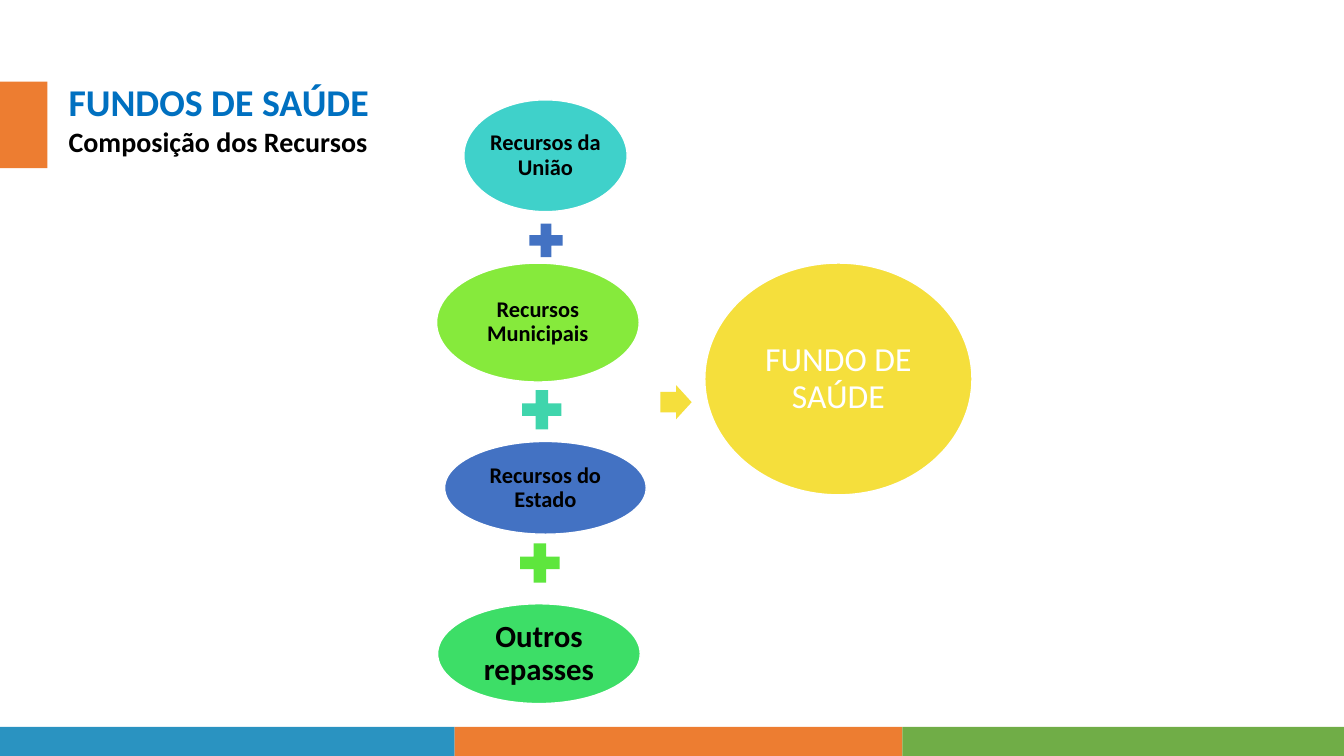
from pptx import Presentation
from pptx.dml.color import RGBColor
from pptx.enum.shapes import MSO_SHAPE
from pptx.enum.text import MSO_ANCHOR, MSO_AUTO_SIZE, PP_ALIGN
from pptx.util import Inches, Pt

FONT = "Calibri"
COLORS = {
    "title": "0070C0", "black": "000000", "white": "FFFFFF",
    "blue": "2A93C1", "orange": "ED7D31", "green": "70AD47",
    "turquoise": "3FD1CA", "lime": "86EA3C", "indigo": "4372C3",
    "emerald": "3DDE67", "aqua": "3FD5AC", "grass": "5EE63D",
    "yellow": "F5DF3C",
}

# text, size, colour, space it takes in the title
HEADING = [("FUNDOS DE SAÚDE", 27, "title"), ("Composição dos Recursos", 20, "black")]

# colour, width; laid from left to right
FOOTER_BANDS = [("blue", 4.51), ("orange", 4.44), ("green", 4.38)]
FOOTER_TOP, FOOTER_HEIGHT = 7.21, 0.29

# text, (left, top, width, height), fill, text size, text colour, bold
FUNDS = [
    ("Recursos da União", (4.6, 0.99, 1.62, 1.11), "turquoise", 16, "black", True),
    ("Recursos Municipais", (4.33, 2.61, 2.01, 1.18), "lime", 16, "black", True),
    ("Recursos do Estado", (4.41, 4.38, 2, 0.92), "indigo", 16, "black", True),
    ("Outros repasses", (4.34, 5.99, 2.01, 0.99), "emerald", 22, "black", True),
    ("FUNDO DE SAÚDE", (6.99, 2.61, 2.65, 2.3), "yellow", 24, "white", False),
]

# left, top, side, colour
PLUS_SIGNS = [
    (5.19, 2.16, 0.45, "indigo"),
    (5.11, 3.8, 0.53, "aqua"),
    (5.09, 5.32, 0.53, "grass"),
]


def rgb(name):
    return RGBColor.from_string(COLORS[name])


def add_filled(slide, kind, box, color):
    shape = slide.shapes.add_shape(kind, *map(Inches, box))
    shape.shadow.inherit = False
    shape.fill.solid()
    shape.fill.fore_color.rgb = rgb(color)
    shape.line.fill.background()
    return shape


def set_insets(frame, horizontal, vertical):
    frame.margin_left = frame.margin_right = Inches(horizontal)
    frame.margin_top = frame.margin_bottom = Inches(vertical)


def style(paragraph, size, color, bold, align, spacing):
    font = paragraph.font
    font.name, font.size, font.bold = FONT, Pt(size), bold
    font.color.rgb = rgb(color)
    paragraph.alignment = align
    paragraph.line_spacing = spacing


def add_heading(slide):
    title = slide.shapes.title
    title.left, title.top, title.width, title.height = map(Inches, (0.63, 0.76, 6.08, 0.84))
    frame = title.text_frame
    frame.text = "\n".join(line for line, _, _ in HEADING)
    frame.word_wrap = True
    frame.auto_size = MSO_AUTO_SIZE.NONE
    frame.vertical_anchor = MSO_ANCHOR.TOP
    set_insets(frame, 0.05, 0.02)
    for paragraph, (_, size, color) in zip(frame.paragraphs, HEADING):
        style(paragraph, size, color, True, PP_ALIGN.LEFT, 1.0)
        paragraph.space_before = Pt(0)


def add_fund(slide, label, box, fill, size, color, bold):
    oval = add_filled(slide, MSO_SHAPE.OVAL, box, fill)
    oval.line.color.rgb = rgb("white")
    oval.line.width = Pt(1)
    frame = oval.text_frame
    frame.text = label
    frame.word_wrap = True
    frame.vertical_anchor = MSO_ANCHOR.MIDDLE
    set_insets(frame, 0.02, 0.02)
    style(frame.paragraphs[0], size, color, bold, PP_ALIGN.CENTER, 0.9)


def main():
    prs = Presentation()
    prs.slide_width, prs.slide_height = Inches(13.33), Inches(7.5)
    slide = prs.slides.add_slide(prs.slide_layouts[5])

    left = 0
    for color, width in FOOTER_BANDS:
        add_filled(slide, MSO_SHAPE.RECTANGLE, (left, FOOTER_TOP, width, FOOTER_HEIGHT), color)
        left += width
    add_filled(slide, MSO_SHAPE.RECTANGLE, (0, 0.81, 0.47, 0.86), "orange")
    add_heading(slide)

    for fund in FUNDS:
        add_fund(slide, *fund)
    for left, top, side, color in PLUS_SIGNS:
        add_filled(slide, MSO_SHAPE.MATH_PLUS, (left, top, side, side), color)
    arrow = add_filled(slide, MSO_SHAPE.RIGHT_ARROW, (6.55, 3.82, 0.31, 0.34), "yellow")
    arrow.adjustments[0] = 0.6

    prs.save("out.pptx")


if __name__ == "__main__":
    main()
